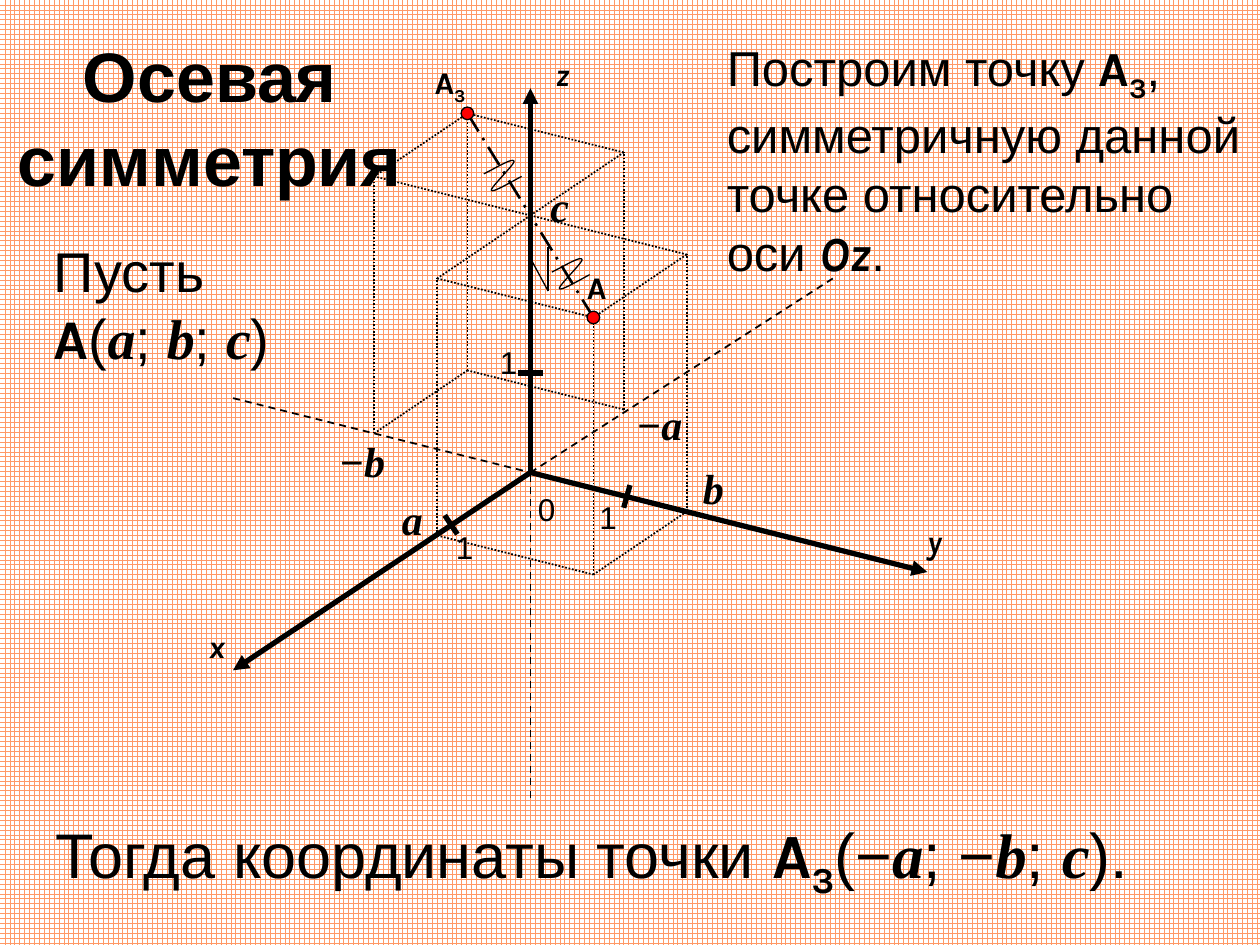
import itertools
from typing import NamedTuple

import pptx
import pptx.dml.color
import pptx.enum.dml
import pptx.enum.shapes
import pptx.enum.text
import pptx.oxml
import pptx.oxml.ns
import pptx.util

COLUMNS, ROWS = 100, 75
CELL = pptx.util.Inches(0.1)
BLACK, RED, ORANGE, WHITE = "000000", "FF0000", "FF9966", "FFFFFF"
DASH = pptx.enum.dml.MSO_LINE


class Point(NamedTuple):
    col: float
    row: float


class Box(NamedTuple):
    col: float
    row: float
    width: float
    height: float


class Style(NamedTuple):
    font: str
    bold: bool = False
    italic: bool = False
    baseline: int = 0


class Label(NamedTuple):
    box: Box
    size: int
    pieces: list[tuple[str, Style]]


PLAIN = Style("Arial")
HEADING = Style("Arial", bold=True)
POINT_NAME = Style("Karla", bold=True)
INDEX = Style("Karla", bold=True, baseline=-25000)
AXIS_NAME = Style("Karla", bold=True, italic=True)
VARIABLE = Style("Times New Roman", bold=True, italic=True)

ORIGIN = Point(42.1, 37.5)
STEP_A, STEP_B, STEP_C = Point(-7.4, 5), Point(12.4, 3.1), Point(0, -20.4)


def project(a: float, b: float, c: float) -> Point:
    """Place on the slide of a point given in multiples of a, b and c."""
    steps = ((a, STEP_A), (b, STEP_B), (c, STEP_C))
    return Point(ORIGIN.col + sum(n * step.col for n, step in steps),
                 ORIGIN.row + sum(n * step.row for n, step in steps))


def cells(count: float) -> int:
    return round(count * CELL)


def color(code: str) -> pptx.dml.color.RGBColor:
    return pptx.dml.color.RGBColor.from_string(code)


def draw_line(slide, start: Point, end: Point, width: float = 1, dash=None, arrow: bool = False) -> None:
    line = slide.shapes.add_connector(pptx.enum.shapes.MSO_CONNECTOR.STRAIGHT,
                                      *map(cells, (*start, *end)))
    line.line.color.rgb = color(BLACK)
    line.line.width = pptx.util.Pt(width)
    if dash is not None:
        line.line.dash_style = dash
    if arrow:
        tail = pptx.oxml.parse_xml(f'<a:tailEnd {pptx.oxml.ns.nsdecls("a")} type="triangle"/>')
        line.line._get_or_add_ln().append(tail)
    line._element.spPr.append(pptx.oxml.parse_xml(f'<a:effectLst {pptx.oxml.ns.nsdecls("a")}/>'))


def write(shape, label: Label) -> None:
    frame = shape.text_frame
    frame.word_wrap = True
    frame.auto_size = pptx.enum.text.MSO_AUTO_SIZE.SHAPE_TO_FIT_TEXT
    for words, style in label.pieces:
        run = frame.paragraphs[0].add_run()
        run.text = words
        run.font.name, run.font.size = style.font, pptx.util.Pt(label.size)
        run.font.bold, run.font.italic = style.bold, style.italic
        run.font.color.rgb = color(BLACK)
        if style.baseline:
            run._r.get_or_add_rPr().set("baseline", str(style.baseline))


def draw_label(slide, label: Label) -> None:
    write(slide.shapes.add_textbox(*map(cells, label.box)), label)


def draw_title(slide, label: Label) -> None:
    title = slide.shapes.title
    title.left, title.top, title.width, title.height = map(cells, label.box)
    title.text_frame.vertical_anchor = pptx.enum.text.MSO_ANCHOR.TOP
    write(title, label)
    title.text_frame.paragraphs[0].alignment = pptx.enum.text.PP_ALIGN.CENTER


def draw_prism(slide, sign: int) -> None:
    """Dotted edges of the box from the origin to (±a; ±b; c), off the axes."""
    corners = list(itertools.product((0, sign), (0, sign), (0, 1)))
    for start, end in itertools.combinations(corners, 2):
        is_edge = sum(p != q for p, q in zip(start, end)) == 1
        on_axis = start == (0, 0, 0)
        if is_edge and not on_axis:
            draw_line(slide, project(*start), project(*end), dash=DASH.ROUND_DOT)


def draw_dot(slide, center: Point) -> None:
    dot = slide.shapes.add_shape(pptx.enum.shapes.MSO_SHAPE.OVAL,
                                 *map(cells, (center.col - 0.5, center.row - 0.5, 1, 1)))
    dot.shadow.inherit = False
    dot.fill.solid()
    dot.fill.fore_color.rgb = color(RED)
    dot.line.color.rgb = color(BLACK)
    dot.line.width = pptx.util.Pt(0.75)


EQUALITY_MARK = [Point(46.8, 21.8), Point(45.7, 22.4), Point(44.5, 23.1), Point(44.4, 22.9),
                 Point(44.3, 22.7), Point(46.3, 20.8), Point(46.2, 20.6),
                 Point(46.1, 20.3), Point(45, 21), Point(43.8, 21.6)]


def bezier(knots: list[Point], t: float) -> Point:
    weights = ((1 - t) ** 3, 3 * t * (1 - t) ** 2, 3 * t ** 2 * (1 - t), t ** 3)
    return Point(*(sum(w * n for w, n in zip(weights, axis)) for axis in zip(*knots)))


def draw_equality_mark(slide, shift: Point) -> None:
    """Curved tick that marks one of two equal segments."""
    curve = [bezier(EQUALITY_MARK[first:first + 4], step / 12)
             for first in (0, 3, 6) for step in range(13)]
    outline = [(cells(p.col + shift.col), cells(p.row + shift.row)) for p in curve]
    builder = slide.shapes.build_freeform(*outline[0])
    builder.add_line_segments(outline[1:], close=False)
    mark = builder.convert_to_shape()
    mark.shadow.inherit = False
    mark.fill.background()
    mark.line.color.rgb = color(BLACK)
    mark.line.width = pptx.util.Pt(0.75)


TITLE = Label(Box(0, 2.1, 33.3, 14.5), 40, [("Осевая симметрия", HEADING)])
POSITIVE_ENDS = [Point(18.5, 53.2), Point(73.6, 45.4), Point(42.1, 7)]
NEGATIVE_ENDS = [Point(66.1, 22.1), Point(18.5, 31.6), Point(42.1, 63.3)]
UNIT_TICKS = [(Point(41.1, 29.6), Point(43.1, 29.6)),
              (Point(49.5, 40.3), Point(50, 38.5)),
              (Point(35.3, 40.9), Point(36.3, 42.4))]
RIGHT_ANGLE = [Point(43.5, 19.6), Point(43.5, 23.1), Point(42.1, 20.5)]
LABELS = [
    Label(Box(15.6, 49.3, 4.4, 4), 18, [("x", AXIS_NAME)]),
    Label(Box(72.6, 40.9, 4.4, 4), 18, [("y", AXIS_NAME)]),
    Label(Box(43.1, 3.9, 4.4, 4), 18, [("z", AXIS_NAME)]),
    Label(Box(41.7, 38.4, 3.5, 4), 18, [("0", PLAIN)]),
    *(Label(Box(col, row, 4.4, 4), 18, [("1", PLAIN)])
      for col, row in ((46.6, 39), (38.7, 26.7), (35.2, 41.4))),
    Label(Box(45.6, 20.8, 3.5, 4), 18, [("A", POINT_NAME)]),
    Label(Box(33.5, 4.5, 5.2, 4), 18, [("A", POINT_NAME), ("3", INDEX)]),
    Label(Box(30.9, 38.7, 3.9, 5), 24, [("a", VARIABLE)]),
    Label(Box(54.8, 36.2, 3.9, 5), 24, [("b", VARIABLE)]),
    Label(Box(42.7, 13.8, 3.9, 5), 24, [("c", VARIABLE)]),
    Label(Box(49.5, 31.1, 6.4, 5), 24, [("−a", VARIABLE)]),
    Label(Box(25.9, 34.1, 5.9, 5), 24, [("−b", VARIABLE)]),
    Label(Box(3.3, 18.3, 20.7, 11.8), 32, [
        ("Пусть ", PLAIN), ("A", POINT_NAME), ("(", PLAIN), ("a", VARIABLE), ("; ", PLAIN),
        ("b", VARIABLE), ("; ", PLAIN), ("c", VARIABLE), (")", PLAIN)]),
    Label(Box(56.7, 2.5, 43.3, 19.9), 28, [
        ("Построим точку ", PLAIN), ("A", POINT_NAME), ("3", INDEX),
        (", симметричную данной точке относительно оси ", PLAIN), ("Oz", AXIS_NAME), (".", PLAIN)]),
    Label(Box(3.4, 64.2, 94.9, 7.1), 36, [
        ("Тогда координаты точки ", PLAIN), ("A", POINT_NAME), ("3", INDEX), ("(−", PLAIN),
        ("a", VARIABLE), ("; −", PLAIN), ("b", VARIABLE), ("; ", PLAIN), ("c", VARIABLE), (").", PLAIN)]),
]


def main() -> None:
    deck = pptx.Presentation()
    deck.slide_width, deck.slide_height = cells(COLUMNS), cells(ROWS)
    slide = deck.slides.add_slide(deck.slide_layouts.get_by_name("Title Only"))
    paper = slide.background.fill
    paper.patterned()
    paper.pattern = pptx.enum.dml.MSO_PATTERN.LARGE_GRID
    paper.fore_color.rgb, paper.back_color.rgb = color(ORANGE), color(WHITE)

    draw_title(slide, TITLE)
    for end in NEGATIVE_ENDS:
        draw_line(slide, end, ORIGIN, dash=DASH.DASH)
    for end in POSITIVE_ENDS:
        draw_line(slide, ORIGIN, end, width=3, arrow=True)
    for start, end in UNIT_TICKS:
        draw_line(slide, start, end, width=3)
    for sign, mark_shift in ((1, Point(0, 0)), (-1, Point(-5.4, -7.8))):
        vertex = project(sign, sign, 1)
        draw_prism(slide, sign)
        draw_line(slide, vertex, project(0, 0, 1), width=1.5, dash=DASH.LONG_DASH_DOT)
        draw_equality_mark(slide, mark_shift)
        draw_dot(slide, vertex)
    for start, end in itertools.pairwise(RIGHT_ANGLE):
        draw_line(slide, start, end, width=0.75)
    for label in LABELS:
        draw_label(slide, label)
    deck.save("out.pptx")


if __name__ == "__main__":
    main()
